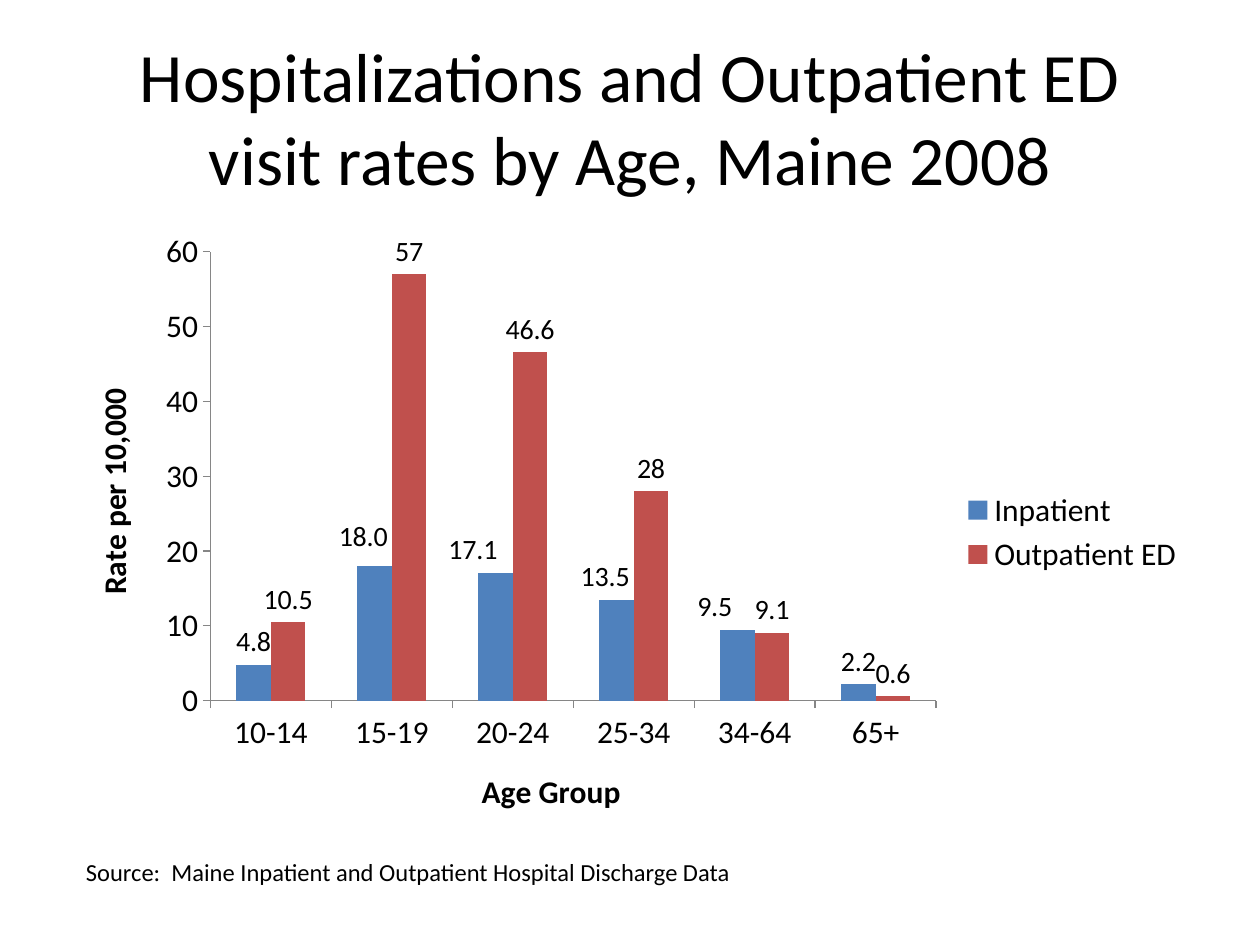
from lxml.etree import SubElement
from pptx import Presentation
from pptx.chart.data import CategoryChartData
from pptx.dml.color import RGBColor
from pptx.enum.chart import XL_CHART_TYPE, XL_LABEL_POSITION, XL_LEGEND_POSITION, XL_TICK_MARK
from pptx.enum.text import MSO_ANCHOR, MSO_AUTO_SIZE, PP_ALIGN
from pptx.oxml.ns import qn
from pptx.util import Pt

AGES = ["10-14", "15-19", "20-24", "25-34", "34-64", "65+"]
SERIES = [
    ("Inpatient", [4.8, 18, 17.1, 13.5, 9.5, 2.2], "4F81BD", "#,##0.0"),
    ("Outpatient ED", [10.5, 57, 46.6, 28, 9.1, 0.6], "C0504D", "General"),
]
INPATIENT_LABEL_SHIFTS = {1: (-0.01, -0.01), 2: (-0.02, 0), 3: (-0.01, 0), 4: (-0.02, 0)}
PLOT_AREA = {"x": 0.13, "y": 0.05, "w": 0.64, "h": 0.72}


def color(value):
    return RGBColor.from_string(value)


def style_font(font, size, bold=False):
    font.name = "Calibri"
    font.size = Pt(size)
    font.bold = bold
    font.color.rgb = color("000000")


def place(sp, box):
    sp.left, sp.top, sp.width, sp.height = (Pt(v) for v in box)


def add_title(s, box, text):
    sp = s.shapes.title
    place(sp, box)
    tf = sp.text_frame
    tf.text = text
    tf.word_wrap = True
    tf.vertical_anchor = MSO_ANCHOR.MIDDLE
    p = tf.paragraphs[0]
    p.alignment = PP_ALIGN.CENTER
    style_font(p.font, 39.6)


def add_source(s, box, text):
    tf = s.shapes.add_textbox(*(Pt(v) for v in box)).text_frame
    tf.word_wrap = True
    tf.auto_size = MSO_AUTO_SIZE.SHAPE_TO_FIT_TEXT
    tf.text = text
    style_font(tf.paragraphs[0].font, 14)


def add_layout(parent, index, values):
    layout = parent.makeelement(qn("c:layout"))
    parent.insert(index, layout)
    manual = SubElement(layout, qn("c:manualLayout"))
    for tag, value in values.items():
        SubElement(manual, qn(f"c:{tag}")).set("val", str(value))


def style_axis(axis, title):
    axis.has_major_gridlines = False
    axis.major_tick_mark = XL_TICK_MARK.OUTSIDE
    axis.minor_tick_mark = XL_TICK_MARK.NONE
    axis.format.line.color.rgb = color("868686")
    axis.format.line.width = Pt(0.75)
    style_font(axis.tick_labels.font, 18)
    tf = axis.axis_title.text_frame
    tf.text = title
    style_font(tf.paragraphs[0].font, 18, bold=True)


def style_series(series, fill, number_format):
    series.smooth = False if hasattr(series, "smooth") else None
    series.format.fill.solid()
    series.format.fill.fore_color.rgb = color(fill)
    labels = series.data_labels
    labels.show_value = True
    labels.number_format = number_format
    labels.number_format_is_linked = False
    labels.position = XL_LABEL_POSITION.OUTSIDE_END
    style_font(labels.font, 16)


def shift_labels(series, shifts, number_format):
    for index, (dx, dy) in shifts.items():
        label = series.points[index].data_label
        label.position = XL_LABEL_POSITION.OUTSIDE_END
        style_font(label.font, 16)
        element = series._element.xpath(f"c:dLbls/c:dLbl[c:idx/@val='{index}']")[0]
        add_layout(element, 1, {"x": dx, "y": dy})
        number = element.makeelement(qn("c:numFmt"), {"formatCode": number_format, "sourceLinked": "0"})
        element.insert(2, number)


def add_rate_chart(s, box):
    data = CategoryChartData()
    data.categories = AGES
    for name, values, _, _ in SERIES:
        data.add_series(name, values)
    chart = s.shapes.add_chart(
        XL_CHART_TYPE.COLUMN_CLUSTERED, *(Pt(v) for v in box), data).chart
    style_font(chart.font, 18)
    chart.has_title = False
    chart.has_legend = True
    chart.legend.position = XL_LEGEND_POSITION.RIGHT
    chart.legend.include_in_layout = False
    style_font(chart.legend.font, 18)

    style_axis(chart.category_axis, "Age Group")
    style_axis(chart.value_axis, "Rate per 10,000")
    chart.value_axis.minimum_scale = 0
    chart.value_axis.maximum_scale = 60
    chart.value_axis.major_unit = 10

    plot = chart.plots[0]
    plot.vary_by_categories = False
    plot.gap_width = 150
    plot.overlap = 0
    for series, (_, _, fill, number_format) in zip(plot.series, SERIES):
        style_series(series, fill, number_format)
    shift_labels(plot.series[0], INPATIENT_LABEL_SHIFTS, SERIES[0][3])

    area = chart._chartSpace.chart.plotArea
    for old in area.findall(qn("c:layout")):
        area.remove(old)
    add_layout(area, 0, {"layoutTarget": "inner", "xMode": "edge", "yMode": "edge", **PLOT_AREA})


def main():
    prs = Presentation()
    prs.slide_width, prs.slide_height = Pt(720), Pt(540)
    s = prs.slides.add_slide(prs.slide_layouts[5])
    add_title(s, (36, 21.6, 648, 90),
              "Hospitalizations and Outpatient ED visit rates by Age, Maine 2008")
    add_rate_chart(s, (36, 126, 648, 356.4))
    add_source(s, (42, 486, 420, 24.5),
               "Source:  Maine Inpatient and Outpatient Hospital Discharge Data")
    prs.save("out.pptx")


if __name__ == "__main__":
    main()
